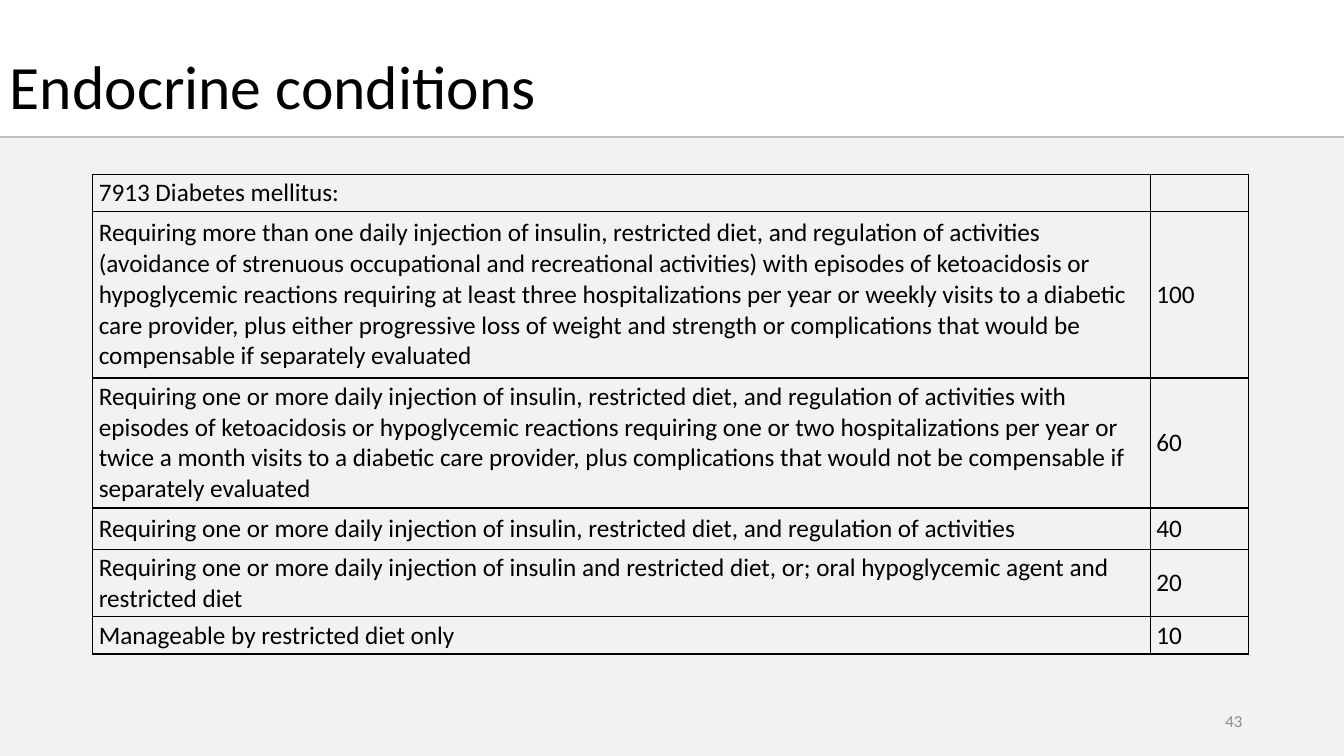
from dataclasses import dataclass

from lxml import etree
from pptx import Presentation
from pptx.dml.color import RGBColor
from pptx.enum.shapes import MSO_CONNECTOR, MSO_SHAPE
from pptx.enum.text import MSO_ANCHOR, PP_ALIGN
from pptx.oxml.ns import qn
from pptx.util import Emu, Pt

LEFT, RIGHT = PP_ALIGN.LEFT, PP_ALIGN.RIGHT
MIDDLE = MSO_ANCHOR.MIDDLE
STRAIGHT = MSO_CONNECTOR.STRAIGHT
RECTANGLE = MSO_SHAPE.RECTANGLE

EMU_PER_PX = 9144  # 100 px to the inch
SLIDE_W, SLIDE_H = 1333, 750
FONT = "Calibri"
COLORS = {
    "panel": "F2F2F2",
    "rule": "BFBFBF",
    "text": "000000",
    "page": "8C8C8C",
    "border": "000000",
}


@dataclass
class Label:
    text: str
    left: int
    top: int
    width: int
    height: int
    size: int
    color: str
    align: PP_ALIGN = LEFT
    line_spacing: float = 1.0


@dataclass
class Rating:
    criteria: str
    percent: str
    height: int


LABELS = [
    Label("Endocrine conditions", 0, 42, 554, 94, 44, "text", line_spacing=0.9),
    Label("43", 942, 695, 300, 40, 12, "page", align=RIGHT),
]
TABLE_LEFT, TABLE_TOP = 92, 173
COLUMN_WIDTHS = [1049, 97]
RATINGS = [
    Rating("7913 Diabetes mellitus:", "", 37),
    Rating(
        "Requiring more than one daily injection of insulin, restricted diet, and "
        "regulation of activities (avoidance of strenuous occupational and recreational "
        "activities) with episodes of ketoacidosis or hypoglycemic reactions requiring at "
        "least three hospitalizations per year or weekly visits to a diabetic care "
        "provider, plus either progressive loss of weight and strength or complications "
        "that would be compensable if separately evaluated", "100", 165),
    Rating(
        "Requiring one or more daily injection of insulin, restricted diet, and "
        "regulation of activities with episodes of ketoacidosis or hypoglycemic reactions "
        "requiring one or two hospitalizations per year or twice a month visits to a "
        "diabetic care provider, plus complications that would not be compensable if "
        "separately evaluated", "60", 129),
    Rating(
        "Requiring one or more daily injection of insulin, restricted diet, and "
        "regulation of activities", "40", 41),
    Rating(
        "Requiring one or more daily injection of insulin and restricted diet, or; oral "
        "hypoglycemic agent and restricted diet", "20", 67),
    Rating("Manageable by restricted diet only", "10", 37),
]


def px(length: int) -> Emu:
    return Emu(length * EMU_PER_PX)


def rgb(name: str) -> RGBColor:
    return RGBColor.from_string(COLORS[name])


def style_paragraph(paragraph, size: int, color: str) -> None:
    paragraph.font.name = FONT
    paragraph.font.size = Pt(size)
    paragraph.font.color.rgb = rgb(color)


def draw_background(slide) -> None:
    panel = slide.shapes.add_shape(RECTANGLE, 0, px(137), px(SLIDE_W), px(SLIDE_H - 137))
    panel.shadow.inherit = False
    panel.fill.solid()
    panel.fill.fore_color.rgb = rgb("panel")
    panel.line.fill.background()

    rule = slide.shapes.add_connector(STRAIGHT, 0, px(136), px(SLIDE_W), px(136))
    rule.line.color.rgb = rgb("rule")
    rule.line.width = Pt(1.5)
    etree.SubElement(rule._element.spPr, qn("a:effectLst"))


def draw_label(slide, label: Label) -> None:
    box = slide.shapes.add_textbox(
        px(label.left), px(label.top), px(label.width), px(label.height))
    frame = box.text_frame
    frame.word_wrap = True
    frame.vertical_anchor = MIDDLE
    paragraph = frame.paragraphs[0]
    paragraph.text = label.text
    paragraph.alignment = label.align
    paragraph.line_spacing = label.line_spacing
    style_paragraph(paragraph, label.size, label.color)


def add_borders(cell) -> None:
    properties = cell._tc.get_or_add_tcPr()
    for index, side in enumerate(("lnL", "lnR", "lnT", "lnB")):
        border = etree.Element(qn(f"a:{side}"), w=str(Pt(1)))
        fill = etree.SubElement(border, qn("a:solidFill"))
        etree.SubElement(fill, qn("a:srgbClr"), val=COLORS["border"])
        properties.insert(index, border)


def fill_cell(cell, text: str) -> None:
    cell.fill.background()
    cell.vertical_anchor = MIDDLE
    cell.margin_left = cell.margin_right = px(6)
    cell.margin_top = cell.margin_bottom = px(3)
    paragraph = cell.text_frame.paragraphs[0]
    paragraph.text = text
    style_paragraph(paragraph, 18, "text")
    add_borders(cell)


def draw_ratings(slide, ratings: list[Rating]) -> None:
    table = slide.shapes.add_table(
        len(ratings), len(COLUMN_WIDTHS), px(TABLE_LEFT), px(TABLE_TOP),
        px(sum(COLUMN_WIDTHS)), px(sum(rating.height for rating in ratings))).table
    table.first_row = False
    table.horz_banding = False
    for column, width in zip(table.columns, COLUMN_WIDTHS):
        column.width = px(width)
    for row, rating in zip(table.rows, ratings):
        row.height = px(rating.height)
        for cell, text in zip(row.cells, (rating.criteria, rating.percent)):
            fill_cell(cell, text)


def main() -> None:
    presentation = Presentation()
    presentation.slide_width = px(SLIDE_W)
    presentation.slide_height = px(SLIDE_H)
    slide = presentation.slides.add_slide(presentation.slide_layouts[6])

    # Grey panel and rule under the heading
    draw_background(slide)

    # Heading and page number
    for label in LABELS:
        draw_label(slide, label)

    # Rating criteria and percentages
    draw_ratings(slide, RATINGS)

    presentation.save("out.pptx")


if __name__ == "__main__":
    main()
